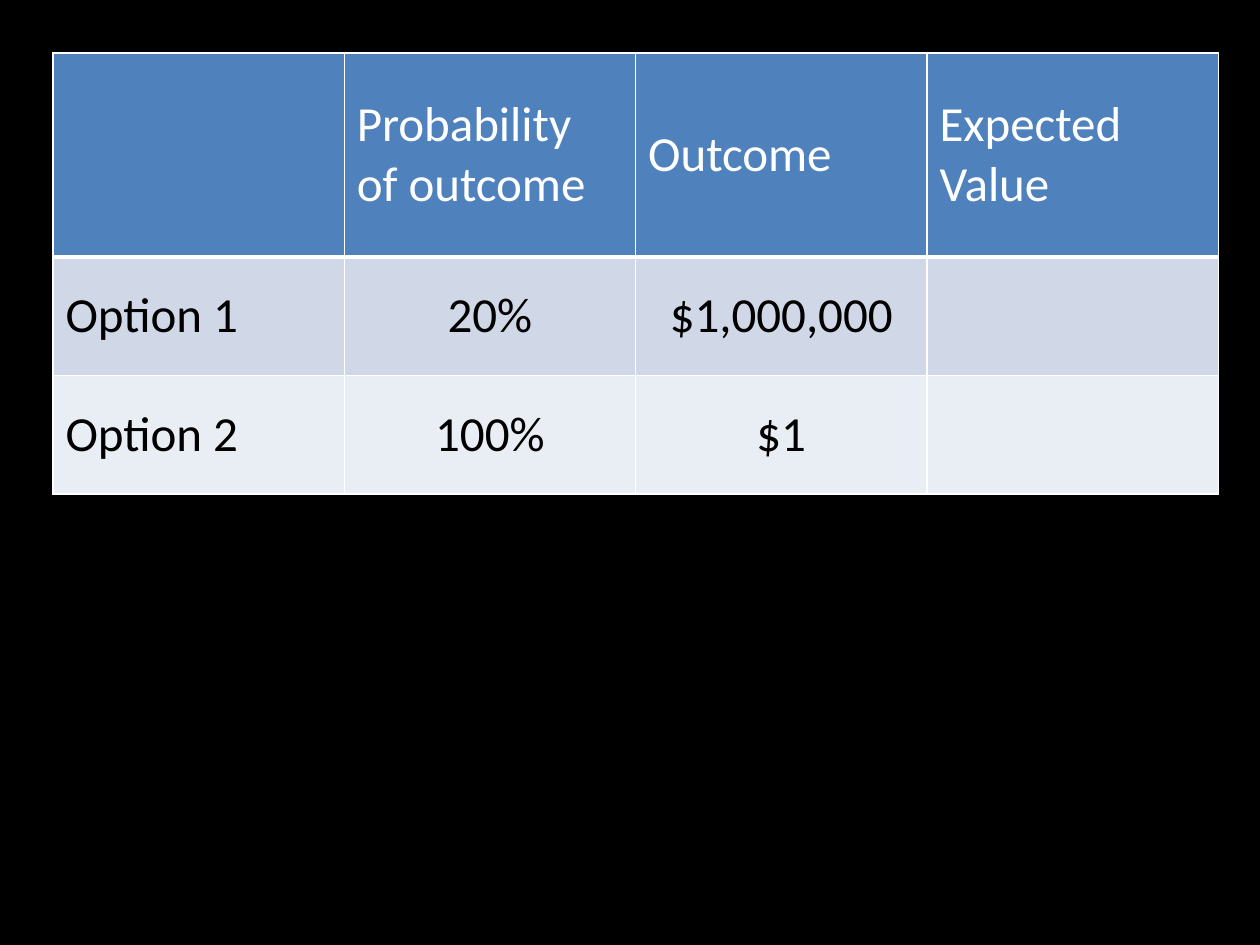
import pptx
import pptx.dml.color
import pptx.enum.text
import pptx.oxml.ns
import pptx.util
from lxml import etree
from pptx.util import Inches

HEADER_FILL = "4F81BD"
BODY_FILLS = ("D0D8E8", "E9EDF4")
WHITE, BLACK = "FFFFFF", "000000"

ROWS = [
    ["", "Probability of outcome", "Outcome", "Expected Value"],
    ["Option 1", "20%", "$1,000,000", ""],
    ["Option 2", "100%", "$1", ""],
]
ROW_HEIGHTS = (1.62, 0.94, 0.94)
TABLE_WIDTH = 9.25


def set_fill(fill, color):
    fill.solid()
    fill.fore_color.rgb = pptx.dml.color.RGBColor.from_string(color)


def add_borders(cell, bottom_width):
    """Draw white borders, 1 pt wide except for the bottom one."""
    tc_pr = cell._tc.get_or_add_tcPr()
    qn = pptx.oxml.ns.qn
    for side, width in (("L", 1), ("R", 1), ("T", 1), ("B", bottom_width)):
        ln = etree.SubElement(tc_pr, qn(f"a:ln{side}"), w=str(pptx.util.Pt(width)))
        solid = etree.SubElement(ln, qn("a:solidFill"))
        etree.SubElement(solid, qn("a:srgbClr"), val=WHITE)


def write_cell(cell, text, color, centered):
    cell.vertical_anchor = pptx.enum.text.MSO_ANCHOR.MIDDLE
    p = cell.text_frame.paragraphs[0]
    p.alignment = pptx.enum.text.PP_ALIGN.CENTER if centered else pptx.enum.text.PP_ALIGN.LEFT
    p.font.size = pptx.util.Pt(28)
    if text:
        r = p.add_run()
        r.text = text
        r.font.name = "Calibri"
        r.font.size = pptx.util.Pt(28)
        set_fill(r.font.fill, color)


def add_outcome_table(s):
    n_cols = len(ROWS[0])
    frame = s.shapes.add_table(len(ROWS), n_cols, Inches(0.42), Inches(0.42),
                               Inches(TABLE_WIDTH), Inches(sum(ROW_HEIGHTS)))
    table = frame.table
    for column in table.columns:
        column.width = Inches(TABLE_WIDTH / n_cols)
    for i, texts in enumerate(ROWS):
        table.rows[i].height = Inches(ROW_HEIGHTS[i])
        header = i == 0
        for j, text in enumerate(texts):
            cell = table.cell(i, j)
            add_borders(cell, 3 if header else 1)
            set_fill(cell.fill, HEADER_FILL if header else BODY_FILLS[i - 1])
            write_cell(cell, text, WHITE if header else BLACK, not header and j > 0)


def main():
    prs = pptx.Presentation()
    prs.slide_width, prs.slide_height = Inches(10), Inches(7.5)
    s = prs.slides.add_slide(prs.slide_layouts[6])
    set_fill(s.background.fill, BLACK)
    add_outcome_table(s)
    prs.save("out.pptx")


if __name__ == "__main__":
    main()
